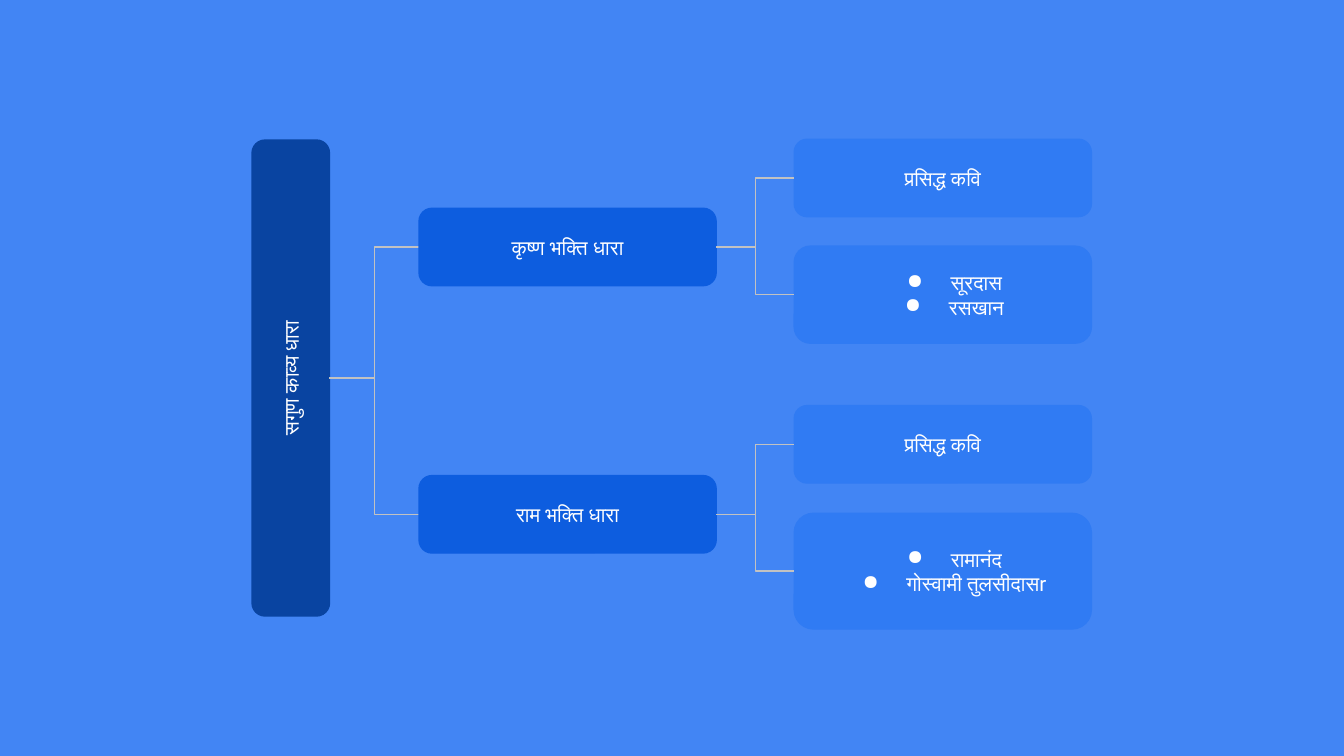
"""Build a slide with a tree of the branches of Saguna poetry and their poets."""
import pptx
import pptx.util
import pptx.dml.color
import pptx.enum.shapes
import pptx.enum.text
import pptx.oxml
import pptx.oxml.ns
from lxml import etree

Pt = pptx.util.Pt
BACK, DARK, MID, LIGHT = "4285F4", "0944A1", "0D5DDF", "307BF3"
WHITE, GREY = "FFFFFF", "C2C2C2"
ROOT = "सगुण काव्य धारा"
TREE = [
    ("कृष्ण भक्ति धारा", 111.6, [
        (["प्रसिद्ध कवि"], 74.6, 41.5),
        (["सूरदास", "रसखान"], 131.9, 52)]),
    ("राम भक्ति धारा", 254.8, [
        (["प्रसिद्ध कवि"], 217.3, 41.5),
        (["रामानंद", "गोस्वामी तुलसीदासr"], 275, 62)]),
]
ROOT_X, ROOT_Y, ROOT_LEN = 155.8, 202.5, 255
BRANCH_X, POET_X, WIDTH, HIGH = 224.5, 425.5, 159.2, 41.5


def color(code):
    return pptx.dml.color.RGBColor.from_string(code)


def bullet(para):
    props = para._p.get_or_add_pPr()
    props.set("marL", str(Pt(36)))
    props.set("indent", str(Pt(-23.5)))
    tint = etree.SubElement(props, pptx.oxml.ns.qn("a:buClr"))
    etree.SubElement(tint, pptx.oxml.ns.qn("a:srgbClr"), val=WHITE)
    etree.SubElement(props, pptx.oxml.ns.qn("a:buChar"), char="●")


def box(slide, lines, x, y, w, h, fill, turn=0):
    kind = pptx.enum.shapes.MSO_SHAPE.ROUNDED_RECTANGLE
    shape = slide.shapes.add_shape(kind, Pt(x), Pt(y), Pt(w), Pt(h))
    shape.rotation = turn
    shape.shadow.inherit = False
    shape.fill.solid()
    shape.fill.fore_color.rgb = color(fill)
    shape.line.color.rgb = color(fill)
    shape.line.width = Pt(0.75)
    frame = shape.text_frame
    frame.word_wrap = True
    frame.vertical_anchor = pptx.enum.text.MSO_ANCHOR.MIDDLE
    frame.margin_left = frame.margin_right = Pt(7.2)
    frame.margin_top = frame.margin_bottom = Pt(7.2)
    frame.text = "\n".join(lines)
    for para in frame.paragraphs:
        para.alignment = pptx.enum.text.PP_ALIGN.CENTER
        if len(lines) > 1:
            bullet(para)
        para.font.name = "Roboto"
        para.font.size = Pt(11)
        para.font.color.rgb = color(WHITE)


def link(slide, x, y, to_x, to_y):
    kind = pptx.enum.shapes.MSO_CONNECTOR.ELBOW
    line = slide.shapes.add_connector(kind, Pt(x), Pt(y), Pt(to_x), Pt(to_y))
    line.line.color.rgb = color(GREY)
    line.line.width = Pt(0.75)
    etree.SubElement(line._element.spPr, pptx.oxml.ns.qn("a:effectLst"))


def main():
    deck = pptx.Presentation()
    deck.slide_width, deck.slide_height = Pt(720), Pt(405)
    slide = deck.slides.add_slide(deck.slide_layouts[6])
    slide.background.fill.solid()
    slide.background.fill.fore_color.rgb = color(BACK)
    box(slide, [ROOT], ROOT_X - ROOT_LEN / 2, ROOT_Y - HIGH / 2,
        ROOT_LEN, HIGH, DARK, 270)
    for name, top, poets in TREE:
        mid = top + HIGH / 2
        link(slide, ROOT_X + HIGH / 2, ROOT_Y, BRANCH_X, mid)
        box(slide, [name], BRANCH_X, top, WIDTH, HIGH, MID)
        for lines, y, h in poets:
            box(slide, lines, POET_X, y, WIDTH, h, LIGHT)
            link(slide, BRANCH_X + WIDTH, mid, POET_X, y + h / 2)
    deck.save("out.pptx")


if __name__ == "__main__":
    main()
